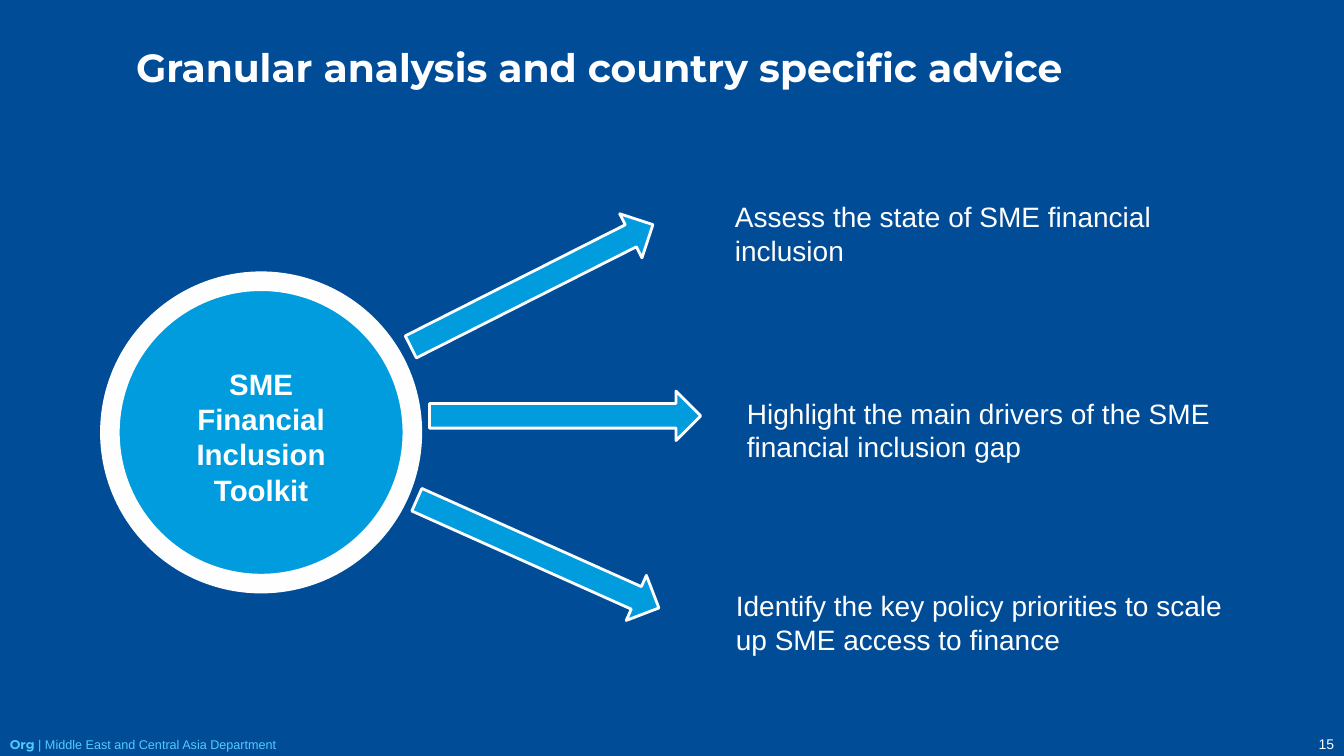
import pptx
import pptx.util
import pptx.dml.color
import pptx.enum.shapes
import pptx.enum.text
from pptx.util import Inches

NAVY, BLUE, SKY, WHITE = "004C97", "009CDE", "52CCFF", "FEFEFE"
SHAPE = pptx.enum.shapes.MSO_SHAPE
ALIGN = pptx.enum.text.PP_ALIGN
ANCHOR = pptx.enum.text.MSO_ANCHOR


def rgb(color):
    return pptx.dml.color.RGBColor.from_string(color)


def style_font(font, size, color=WHITE, name="Arial", bold=False):
    font.size = pptx.util.Pt(size)
    font.name = name
    font.bold = bold
    font.color.rgb = rgb(color)


def add_text(s, box, text, size, align=ALIGN.LEFT, anchor=ANCHOR.TOP):
    """Add a wrapping white text box and return its paragraph."""
    tf = s.shapes.add_textbox(*map(Inches, box)).text_frame
    tf.word_wrap = True
    tf.vertical_anchor = anchor
    p = tf.paragraphs[0]
    p.text = text
    p.alignment = align
    style_font(p.font, size)
    return p


def add_outlined_shape(s, kind, box, line_width, rotation=0):
    """Add a blue preset shape with a white outline."""
    sp = s.shapes.add_shape(kind, *map(Inches, box))
    sp.shadow.inherit = False
    sp.fill.solid()
    sp.fill.fore_color.rgb = rgb(BLUE)
    sp.line.color.rgb = rgb(WHITE)
    sp.line.width = pptx.util.Pt(line_width)
    sp.rotation = rotation
    return sp


def set_title(s, text):
    title = s.shapes.title
    title.left, title.top = Inches(1.35), Inches(0.16)
    title.width, title.height = Inches(10.06), Inches(1.07)
    tf = title.text_frame
    tf.margin_left = tf.margin_right = tf.margin_top = tf.margin_bottom = 0
    tf.vertical_anchor = ANCHOR.MIDDLE
    tf.word_wrap = True
    tf.auto_size = pptx.enum.text.MSO_AUTO_SIZE.NONE
    p = tf.paragraphs[0]
    p.text = text
    p.alignment = ALIGN.LEFT
    p.line_spacing = 0.9
    style_font(p.font, 28, name="Montserrat", bold=True)


def add_hub(s, text):
    tf = add_outlined_shape(s, SHAPE.OVAL, (1.09, 2.79, 3, 3), 14).text_frame
    tf.word_wrap = True
    tf.vertical_anchor = ANCHOR.TOP
    tf.margin_top = Inches(0.4)
    p = tf.paragraphs[0]
    p.text = text
    p.alignment = ALIGN.CENTER
    style_font(p.font, 21, bold=True)


def add_footer(s, owner, department, number):
    p = add_text(s, (0, 7.26, 10, 0.25), "", 9)
    for text, name, bold in ((owner, "Montserrat", True),
                             (department, "Arial", False)):
        r = p.add_run()
        r.text = text
        style_font(r.font, 9, SKY, name, bold)
    add_text(s, (12.01, 7.24, 1.32, 0.27), number, 10,
             ALIGN.RIGHT, ANCHOR.BOTTOM)


def main():
    prs = pptx.Presentation()
    prs.slide_width, prs.slide_height = Inches(13.33), Inches(7.5)
    s = prs.slides.add_slide(prs.slide_layouts[5])
    s.background.fill.solid()
    s.background.fill.fore_color.rgb = rgb(NAVY)

    add_footer(s, "Org ", "| Middle East and Central Asia Department", "15")
    set_title(s, "Granular analysis and country specific advice")
    add_hub(s, "SME Financial Inclusion Toolkit")

    # Arrow left, top, width and rotation; text left and top; text
    goals = (
        (3.93, 2.59, 2.69, 333.2, 7.19, 1.93,
         "Assess the state of SME financial inclusion"),
        (4.26, 3.88, 2.69, 0, 7.31, 3.88,
         "Highlight the main drivers of the SME financial inclusion gap"),
        (4.02, 5.25, 2.63, 24.1, 7.2, 5.79,
         "Identify the key policy priorities to scale up SME access to finance"),
    )
    for left, top, width, rotation, text_left, text_top, text in goals:
        add_outlined_shape(s, SHAPE.RIGHT_ARROW, (left, top, width, 0.49),
                           2, rotation)
        add_text(s, (text_left, text_top, 5.04, 0.77), text, 20)

    prs.save("out.pptx")


if __name__ == "__main__":
    main()
